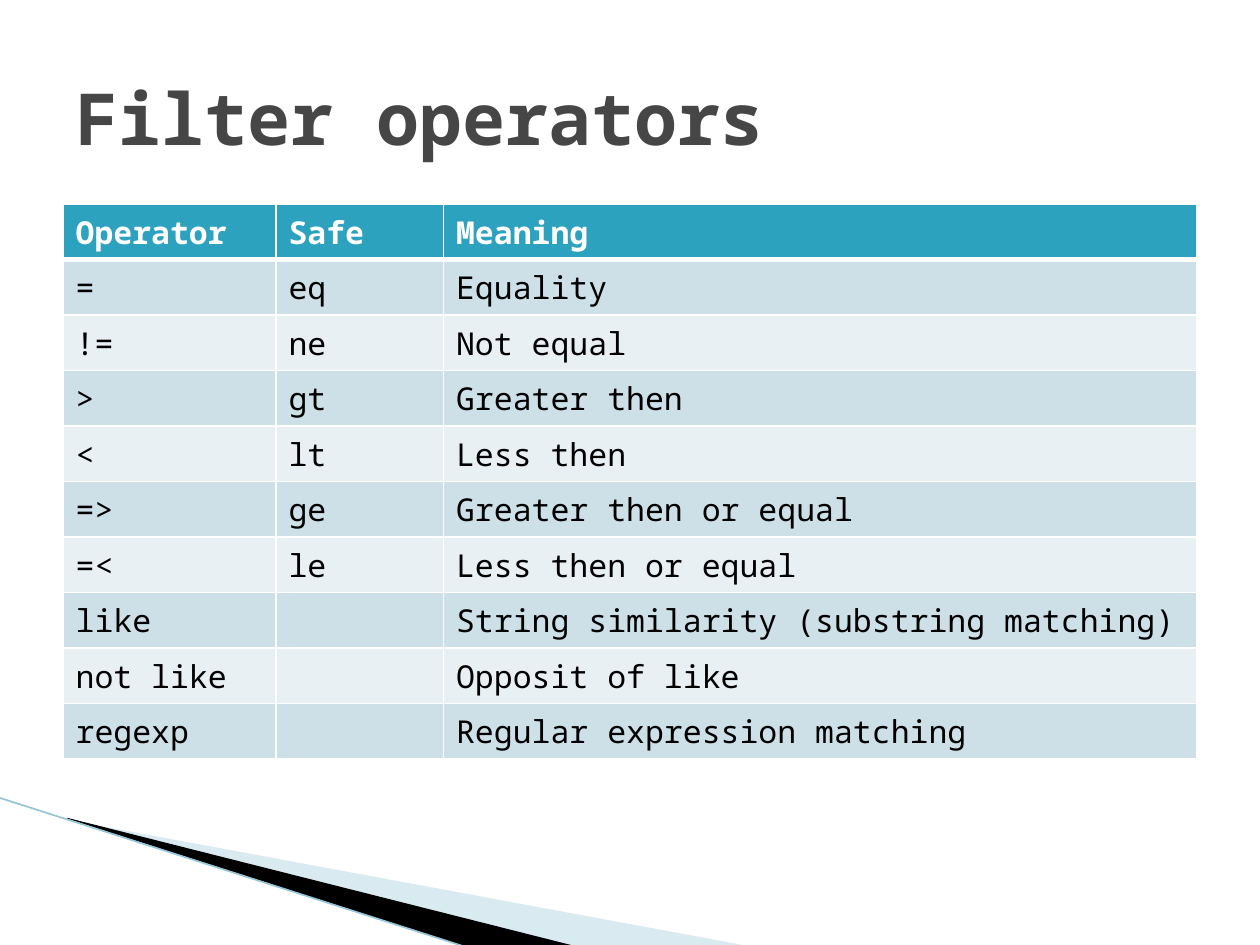
from lxml import etree
from pptx import Presentation
from pptx import util as u
from pptx.dml.color import RGBColor
from pptx.enum import shapes, text
from pptx.oxml import ns

WHITE = RGBColor(0xFF, 0xFF, 0xFF)
BLACK = RGBColor(0x00, 0x00, 0x00)
TITLE_GREY = RGBColor(0x46, 0x46, 0x46)
HEADER_TEAL = RGBColor(0x2D, 0xA2, 0xBF)
BANDS = [RGBColor(0xE8, 0xF0, 0xF4), RGBColor(0xCD, 0xE0, 0xE8)]
WEDGE_BLUE = RGBColor(0xA0, 0xCB, 0xDC)
EDGE_BLUE = RGBColor(0x97, 0xC5, 0xD8)
FONT = "Noto Sans Mono"

OPERATORS = [
    ("Operator", "Safe", "Meaning"),
    ("=", "eq", "Equality"),
    ("!=", "ne", "Not equal"),
    (">", "gt", "Greater then"),
    ("<", "lt", "Less then"),
    ("=>", "ge", "Greater then or equal"),
    ("=<", "le", "Less then or equal"),
    ("like", "", "String similarity (substring matching)"),
    ("not like", "", "Opposit of like"),
    ("regexp", "", "Regular expression matching"),
]
COLUMNS = [1.69, 1.33, 5.98]
ROW = 0.41
MARGIN = 0.5


def add_span(para, words, size, color, bold):
    span = para.add_run()
    span.text = words
    look = {"name": FONT, "size": u.Pt(size), "bold": bold}
    for key, value in look.items():
        setattr(span.font, key, value)
    span.font.color.rgb = color


def add_border(cell, side, points):
    """Draw one white cell edge; call before the cell is filled."""
    properties = cell._tc.get_or_add_tcPr()
    edge = etree.SubElement(properties, ns.qn(f"a:ln{side}"), w=str(u.Pt(points)))
    fill = etree.SubElement(edge, ns.qn("a:solidFill"))
    etree.SubElement(fill, ns.qn("a:srgbClr"), val=str(WHITE))


deck = Presentation()
deck.slide_width, deck.slide_height = u.Inches(10), u.Inches(7.5)
page = deck.slides.add_slide(deck.slide_layouts[6])

# Corner wedges: outline, colour, opacity in percent
wedges = [
    ([(0.55, 6.51), (5.95, 7.51), (4.56, 7.51), (0.55, 6.5)], WEDGE_BLUE, 40),
    ([(0.53, 6.49), (4.57, 7.51), (3.72, 7.52), (0.54, 6.5)], BLACK, 100),
]
for outline, color, opacity in wedges:
    points = [(u.Inches(x), u.Inches(y)) for x, y in outline]
    builder = page.shapes.build_freeform(*points[0])
    builder.add_line_segments(points[1:], close=True)
    wedge = builder.convert_to_shape()
    wedge.shadow.inherit = False
    wedge.line.fill.background()
    wedge.fill.solid()
    wedge.fill.fore_color.rgb = color
    if opacity < 100:
        tint = wedge._element.spPr.find(".//" + ns.qn("a:srgbClr"))
        etree.SubElement(tint, ns.qn("a:alpha"), val=str(opacity * 1000))

edge = page.shapes.add_connector(
    shapes.MSO_CONNECTOR.STRAIGHT,
    u.Inches(-0.01), u.Inches(6.33), u.Inches(3.71), u.Inches(7.52))
edge.line.color.rgb = EDGE_BLUE
edge.line.width = u.Pt(0.95)
etree.SubElement(edge._element.spPr, ns.qn("a:effectLst"))

# Operator table
table = page.shapes.add_table(
    len(OPERATORS), len(COLUMNS), u.Inches(MARGIN), u.Inches(1.62),
    u.Inches(sum(COLUMNS)), u.Inches(ROW * len(OPERATORS))).table
for column, width in zip(table.columns, COLUMNS):
    column.width = u.Inches(width)
for r, entries in enumerate(OPERATORS):
    header = r == 0
    table.rows[r].height = u.Inches(ROW)
    borders = {"L": 1, "R": 1, "T": 3 if r == 1 else 1, "B": 3 if header else 1}
    for c, words in enumerate(entries):
        cell = table.cell(r, c)
        for side, points in borders.items():
            add_border(cell, side, points)
        cell.fill.solid()
        cell.fill.fore_color.rgb = HEADER_TEAL if header else BANDS[r % 2]
        if words:
            add_span(cell.text_frame.paragraphs[0], words, 18,
                     WHITE if header else BLACK, header)

# Title
box = page.shapes.add_textbox(
    u.Inches(MARGIN), u.Inches(0.3), u.Inches(9), u.Inches(1.25))
frame = box.text_frame
frame.word_wrap = True
frame.vertical_anchor = text.MSO_ANCHOR.MIDDLE
add_span(frame.paragraphs[0], "Filter operators", 41, TITLE_GREY, True)

deck.save("out.pptx")
